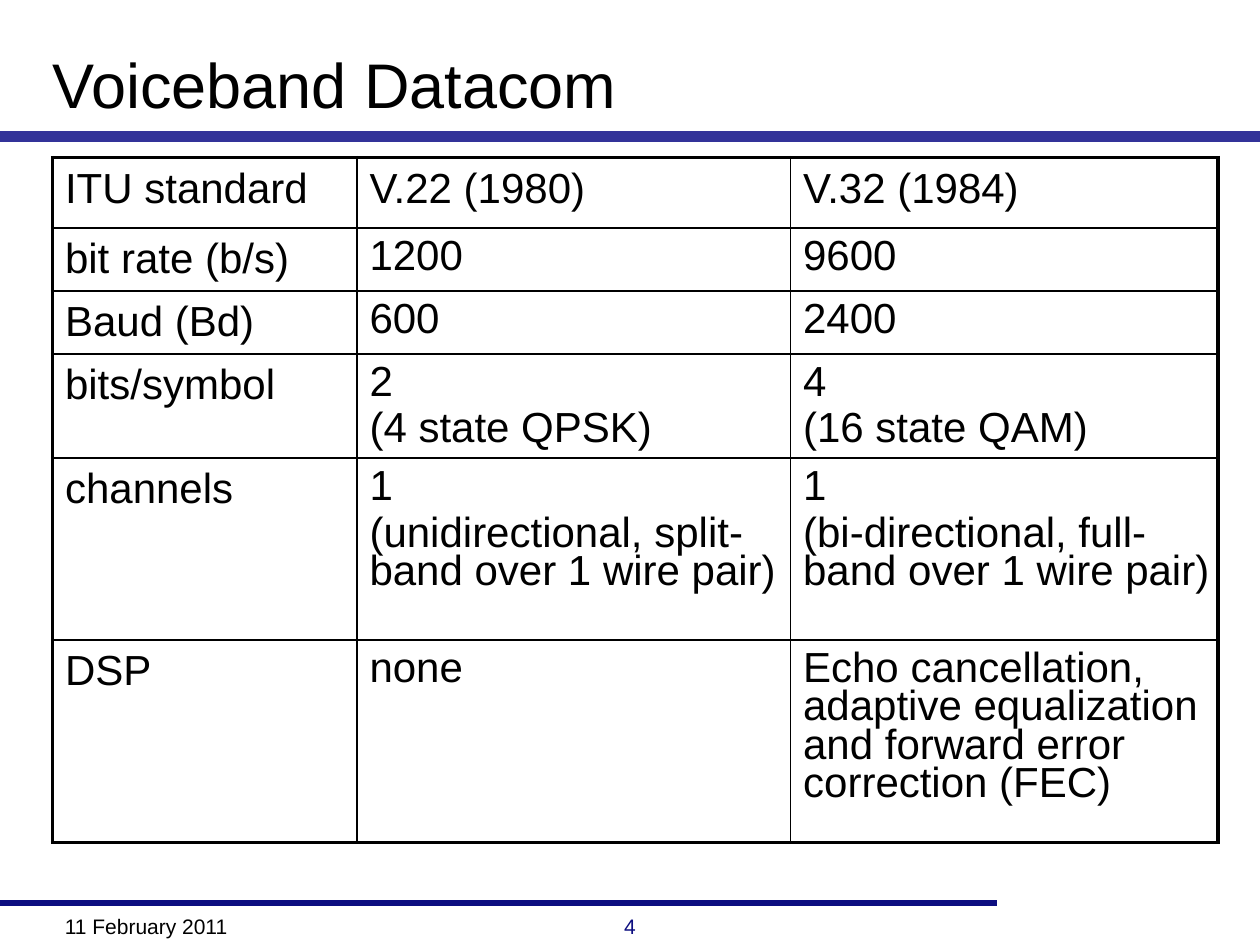
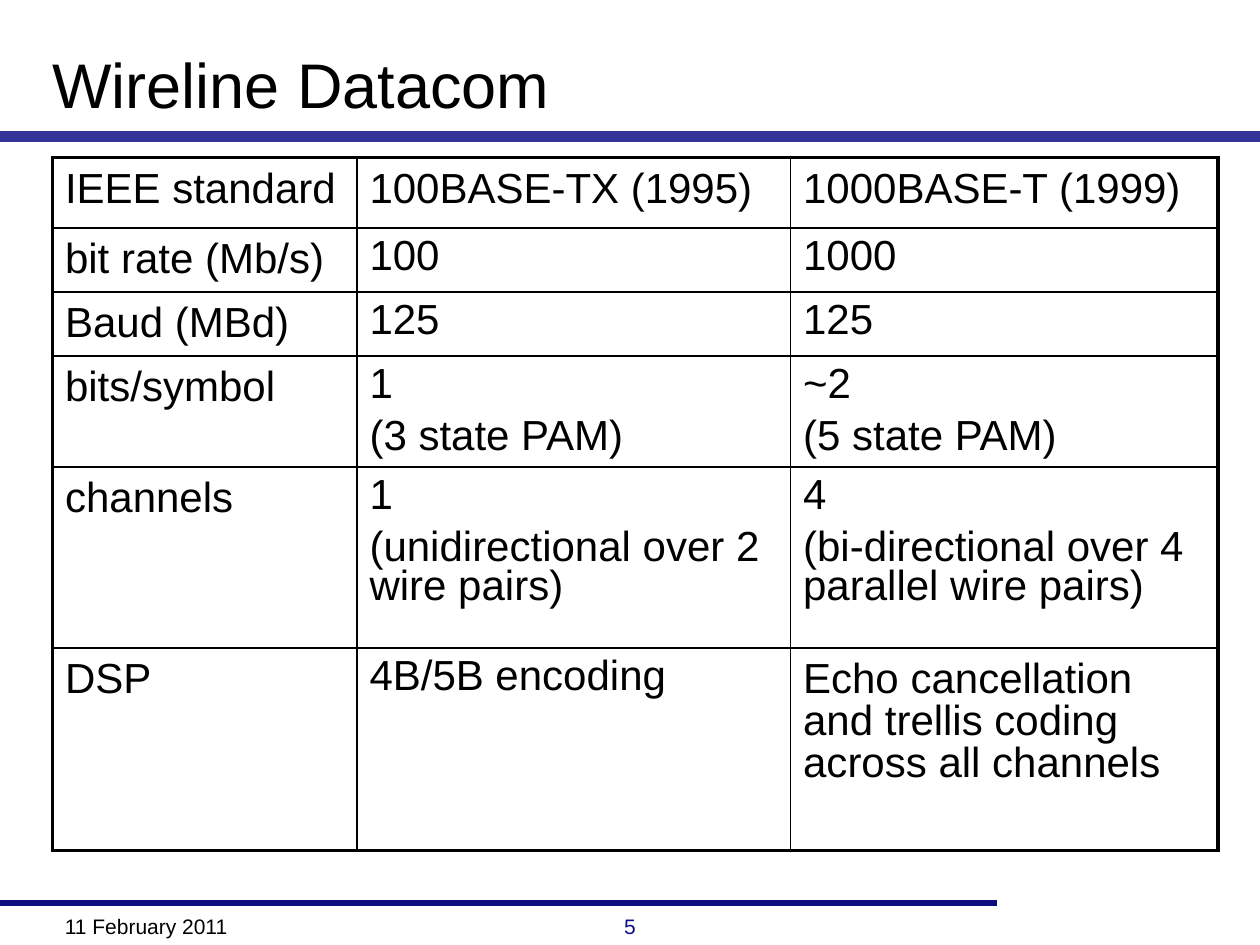
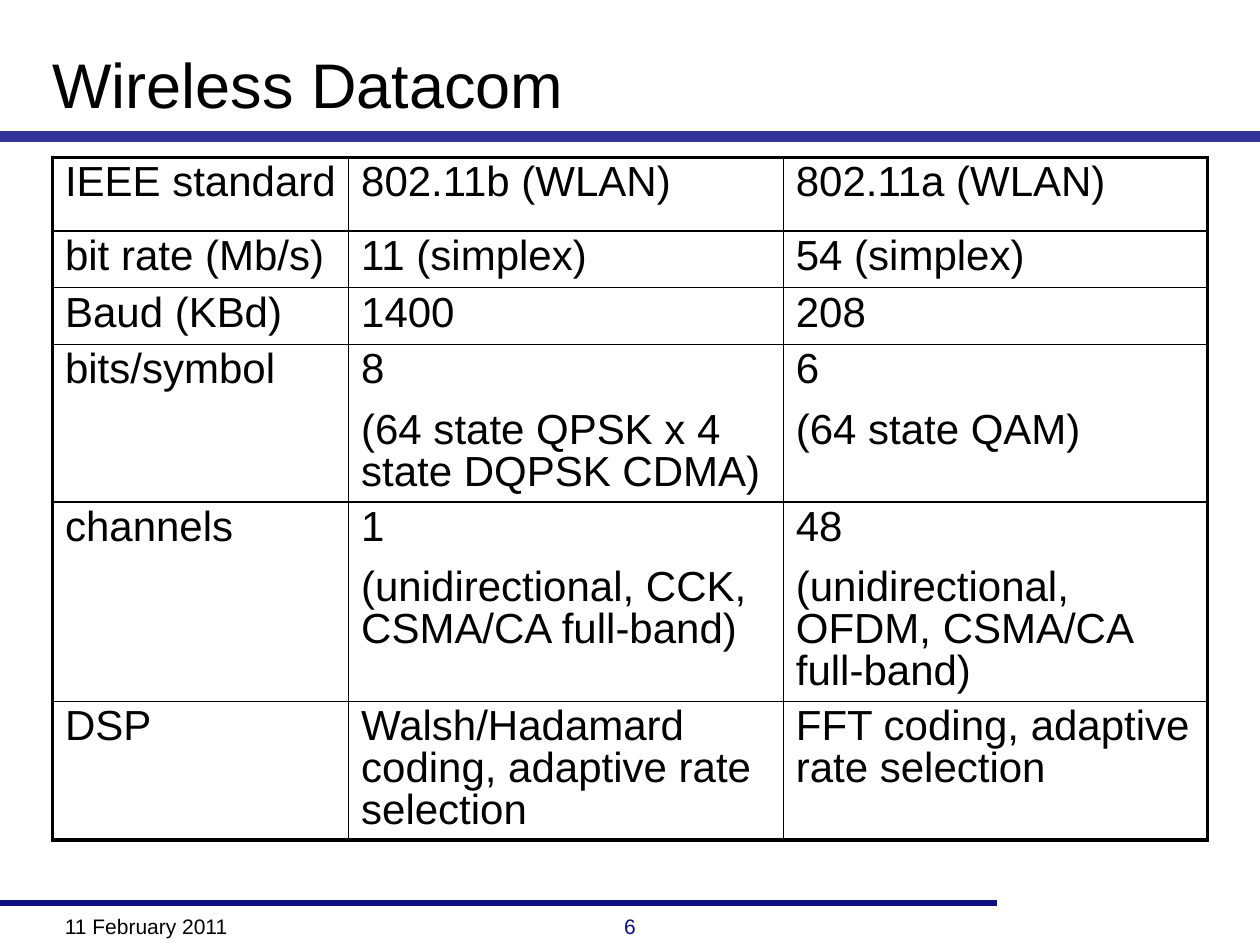
"""Build three slides that compare voiceband, wireline and wireless datacom standards."""
import pptx
import pptx.dml.color
import pptx.enum.shapes
import pptx.enum.text
import pptx.oxml.ns
import pptx.util
from lxml import etree

PX = 7620
BLACK = pptx.dml.color.RGBColor(0x00, 0x00, 0x00)
INDIGO = pptx.dml.color.RGBColor(0x33, 0x33, 0x99)
NAVY = pptx.dml.color.RGBColor(0x0D, 0x0E, 0x80)
LEFT = pptx.enum.text.PP_ALIGN.LEFT
CENTER = pptx.enum.text.PP_ALIGN.CENTER
FONT = "Arial"
OUTER_BORDER, INNER_BORDER = 2.25, 1
TIGHT_LEADING = pptx.util.Pt(22)
LOOSE_LEADING = pptx.util.Pt(24)

TABLES = [
    dict(
        title="Voiceband Datacom",
        columns=[290, 413, 407],
        heights=[67, 60, 60, 98, 173, 193],
        top_inset=12,
        gap=4.8,
        tight_cells={(row, column) for row in range(1, 6) for column in (1, 2)},
        narrow_cells={(4, 2)},
        rows=[
            ["ITU standard", "V.22 (1980)", "V.32 (1984)"],
            ["bit rate (b/s)", "1200", "9600"],
            ["Baud (Bd)", "600", "2400"],
            ["bits/symbol", "2\n(4 state QPSK)", "4\n(16 state QAM)"],
            ["channels", "1\n(unidirectional, split-band over 1 wire pair)",
             "1\n(bi-directional, full-band over 1 wire pair)"],
            ["DSP", "none",
             "Echo cancellation, adaptive equalization and forward error correction (FEC)"],
        ],
    ),
    dict(
        title="Wireline Datacom",
        columns=[290, 413, 407],
        heights=[67, 61, 61, 106, 172, 193],
        top_inset=12,
        gap=8,
        tight_cells={(row, column) for row in range(1, 6) for column in (1, 2)} - {(5, 2)},
        narrow_cells=set(),
        rows=[
            ["IEEE standard", "100BASE-TX (1995)", "1000BASE-T (1999)"],
            ["bit rate (Mb/s)", "100", "1000"],
            ["Baud (MBd)", "125", "125"],
            ["bits/symbol", "1\n(3 state PAM)", "~2\n(5 state PAM)"],
            ["channels", "1\n(unidirectional over 2 wire pairs)",
             "4\n(bi-directional over 4 parallel wire pairs)"],
            ["DSP", "4B/5B encoding",
             "Echo cancellation and trellis coding across all channels"],
        ],
    ),
    dict(
        title="Wireless Datacom",
        columns=[282, 414, 404],
        heights=[70, 54, 54, 150, 190, 132],
        top_inset=6,
        gap=10.4,
        tight_cells=set(),
        narrow_cells=set(),
        rows=[
            ["IEEE standard", "802.11b (WLAN)", "802.11a (WLAN)"],
            ["bit rate (Mb/s)", "11 (simplex)", "54 (simplex)"],
            ["Baud (KBd)", "1400", "208"],
            ["bits/symbol", "8\n(64 state QPSK x 4 state DQPSK CDMA)", "6\n(64 state QAM)"],
            ["channels", "1\n(unidirectional, CCK, CSMA/CA full-band)",
             "48\n(unidirectional, OFDM, CSMA/CA full-band)"],
            ["DSP", "Walsh/Hadamard coding, adaptive rate selection",
             "FFT coding, adaptive rate selection"],
        ],
    ),
]


def write(frame, text, size=12, color=BLACK, align=LEFT, leading=None, gap=0):
    """Fill a text frame with one paragraph for each line of text."""
    frame.word_wrap = True
    for index, line in enumerate(text.split("\n")):
        para = frame.paragraphs[0] if index == 0 else frame.add_paragraph()
        para.alignment = align
        para.line_spacing = leading
        para.space_before = pptx.util.Pt(gap if index else 0)
        span = para.add_run()
        span.text = line
        span.font.name = FONT
        span.font.size = pptx.util.Pt(size)
        span.font.color.rgb = color


def draw_border(cell, side, width):
    """Add a solid black border to one side of a table cell."""
    properties = cell._tc.get_or_add_tcPr()
    line = etree.SubElement(properties, pptx.oxml.ns.qn("a:ln" + side))
    line.set("w", str(pptx.util.Pt(width)))
    fill = etree.SubElement(line, pptx.oxml.ns.qn("a:solidFill"))
    etree.SubElement(fill, pptx.oxml.ns.qn("a:srgbClr")).set("val", str(BLACK))


deck = pptx.Presentation()
deck.slide_width, deck.slide_height = 1200 * PX, 900 * PX

layout = deck.slide_layouts[5]
title_area = layout.placeholders[0]
title_area.left, title_area.top = 50 * PX, 20 * PX
title_area.width, title_area.height = 1090 * PX, 95 * PX

for number, content in enumerate(TABLES, start=4):
    page = deck.slides.add_slide(layout)

    for y, right, color, weight in [(130, 1200, INDIGO, 6), (860, 950, NAVY, 3)]:
        band = page.shapes.add_connector(
            pptx.enum.shapes.MSO_CONNECTOR.STRAIGHT, 0, y * PX, right * PX, y * PX)
        band.line.color.rgb = color
        band.line.width = pptx.util.Pt(weight)
        etree.SubElement(band._element.spPr, pptx.oxml.ns.qn("a:effectLst"))

    for left, width, text, color, align in [
        (50, 290, "11 February 2011", BLACK, LEFT),
        (560, 80, str(number), NAVY, CENTER),
    ]:
        box = page.shapes.add_textbox(left * PX, 864 * PX, width * PX, 36 * PX)
        write(box.text_frame, text, color=color, align=align)

    title = page.shapes.title.text_frame
    title.margin_left = title.margin_top = title.margin_right = title.margin_bottom = 0
    title.vertical_anchor = pptx.enum.text.MSO_ANCHOR.BOTTOM
    title.auto_size = pptx.enum.text.MSO_AUTO_SIZE.NONE
    write(title, content["title"], size=36, leading=pptx.util.Pt(30))

    columns, heights, rows = content["columns"], content["heights"], content["rows"]
    last_row, last_column = len(rows) - 1, len(columns) - 1
    table = page.shapes.add_table(
        len(rows), len(columns), 50 * PX, 150 * PX, sum(columns) * PX, sum(heights) * PX).table
    table.first_row = table.horz_banding = False
    for column, width in zip(table.columns, columns):
        column.width = width * PX
    for row, height in zip(table.rows, heights):
        row.height = height * PX

    for row, texts in enumerate(rows):
        for column, text in enumerate(texts):
            cell = table.cell(row, column)
            place = (row, column)
            cell.margin_left = 12 * PX
            cell.margin_right = (6 if place in content["narrow_cells"] else 12) * PX
            cell.margin_top = content["top_inset"] * PX
            cell.margin_bottom = 6 * PX
            leading = TIGHT_LEADING if place in content["tight_cells"] else LOOSE_LEADING
            write(cell.text_frame, text, size=24, leading=leading, gap=content["gap"])
            for side, is_outer in [
                ("L", column == 0),
                ("R", column == last_column),
                ("T", row == 0),
                ("B", row == last_row),
            ]:
                draw_border(cell, side, OUTER_BORDER if is_outer else INNER_BORDER)
            cell.fill.background()

deck.save("out.pptx")
